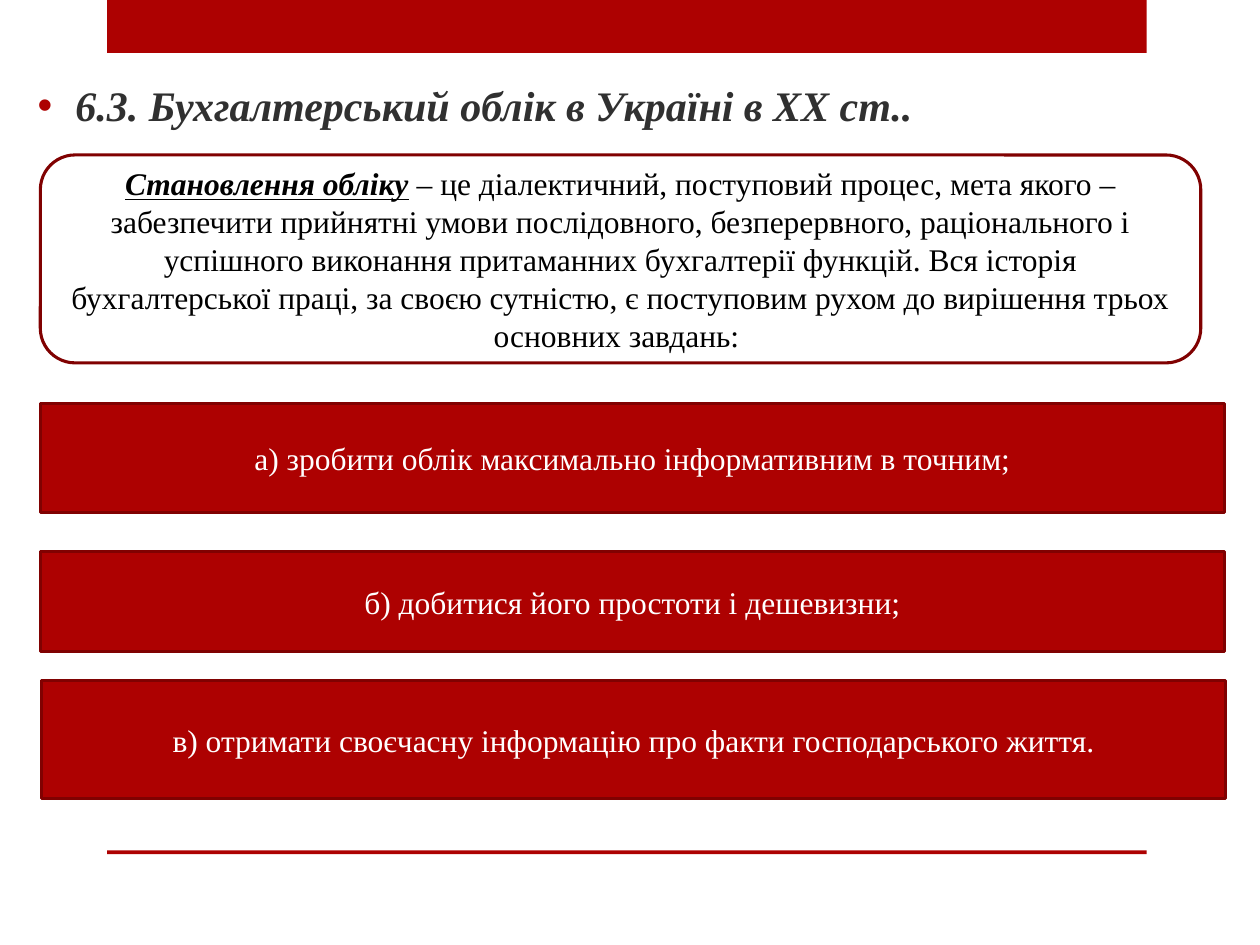
import pptx
import pptx.util
import pptx.dml.color
import pptx.enum.shapes
import pptx.enum.text
from lxml import etree

Inches = pptx.util.Inches
Kind = pptx.enum.shapes.MSO_SHAPE
RED, DARK, WHITE, BLACK, GREY = "AD0101", "800101", "FFFFFF", "000000", "303030"

title = "6.3. Бухгалтерський облік в Україні в ХХ ст.."
term = "Становлення обліку"
meaning = (
    " – це діалектичний, поступовий процес, мета якого – забезпечити прийнятні "
    "умови послідовного, безперервного, раціонального і успішного виконання "
    "притаманних бухгалтерії функцій. Вся історія бухгалтерської праці, за своєю "
    "сутністю, є поступовим рухом до вирішення трьох основних завдань: "
)
tasks = [
    ("а) зробити облік максимально інформативним в точним;", 0.32, 3.2, 0.87),
    ("б) добитися його простоти і дешевизни;", 0.32, 4.38, 0.79),
    ("в) отримати своєчасну інформацію про факти господарського життя.", 0.33, 5.4, 0.94),
]
bands = [(0, 0.42), (6.75, 0.03)]


def color(code):
    return pptx.dml.color.RGBColor.from_string(code)


def write(para, text, size=18, ink=WHITE, bold=False, italic=False, under=False):
    run = para.add_run()
    run.text = text
    font = run.font
    font.name = "Times New Roman"
    font.size = pptx.util.Pt(size)
    font.color.rgb = color(ink)
    font.bold, font.italic, font.underline = bold, italic, under


def setup(shape):
    frame = shape.text_frame
    frame.word_wrap = True
    frame.vertical_anchor = pptx.enum.text.MSO_ANCHOR.MIDDLE
    return frame.paragraphs[0]


def panel(kind, box, fill, line=None):
    shape = slide.shapes.add_shape(kind, *map(Inches, box))
    shape.shadow.inherit = False
    shape.fill.solid()
    shape.fill.fore_color.rgb = color(fill)
    if line:
        shape.line.color.rgb = color(line)
        shape.line.width = pptx.util.Pt(1.75)
    else:
        shape.line.fill.background()
    para = setup(shape)
    para.alignment = pptx.enum.text.PP_ALIGN.CENTER
    return para


def bullet(para, mark, ink, indent):
    props = para._p.get_or_add_pPr()
    props.set("marL", str(Inches(indent)))
    props.set("indent", str(-Inches(indent)))
    space = "{http://schemas.openxmlformats.org/drawingml/2006/main}"
    tint = etree.SubElement(props, space + "buClr")
    etree.SubElement(tint, space + "srgbClr", val=ink)
    etree.SubElement(props, space + "buFont", typeface="Arial")
    etree.SubElement(props, space + "buChar", char=mark)


deck = pptx.Presentation()
deck.slide_width, deck.slide_height = Inches(10), Inches(7.5)
slide = deck.slides.add_slide(deck.slide_layouts[6])

for top, height in bands:
    panel(Kind.RECTANGLE, (0.85, top, 8.25, height), RED)

head = setup(slide.shapes.add_textbox(*map(Inches, (0.2, 0.36, 9.69, 0.94))))
bullet(head, "•", RED, 0.3)
write(head, title, size=24, ink=GREY, bold=True, italic=True)

intro = panel(Kind.ROUNDED_RECTANGLE, (0.32, 1.23, 9.21, 1.65), WHITE, DARK)
write(intro, term, ink=BLACK, bold=True, italic=True, under=True)
write(intro, meaning, ink=BLACK)

for text, left, top, height in tasks:
    write(panel(Kind.RECTANGLE, (left, top, 9.4, height), RED, DARK), text)

deck.save("out.pptx")
